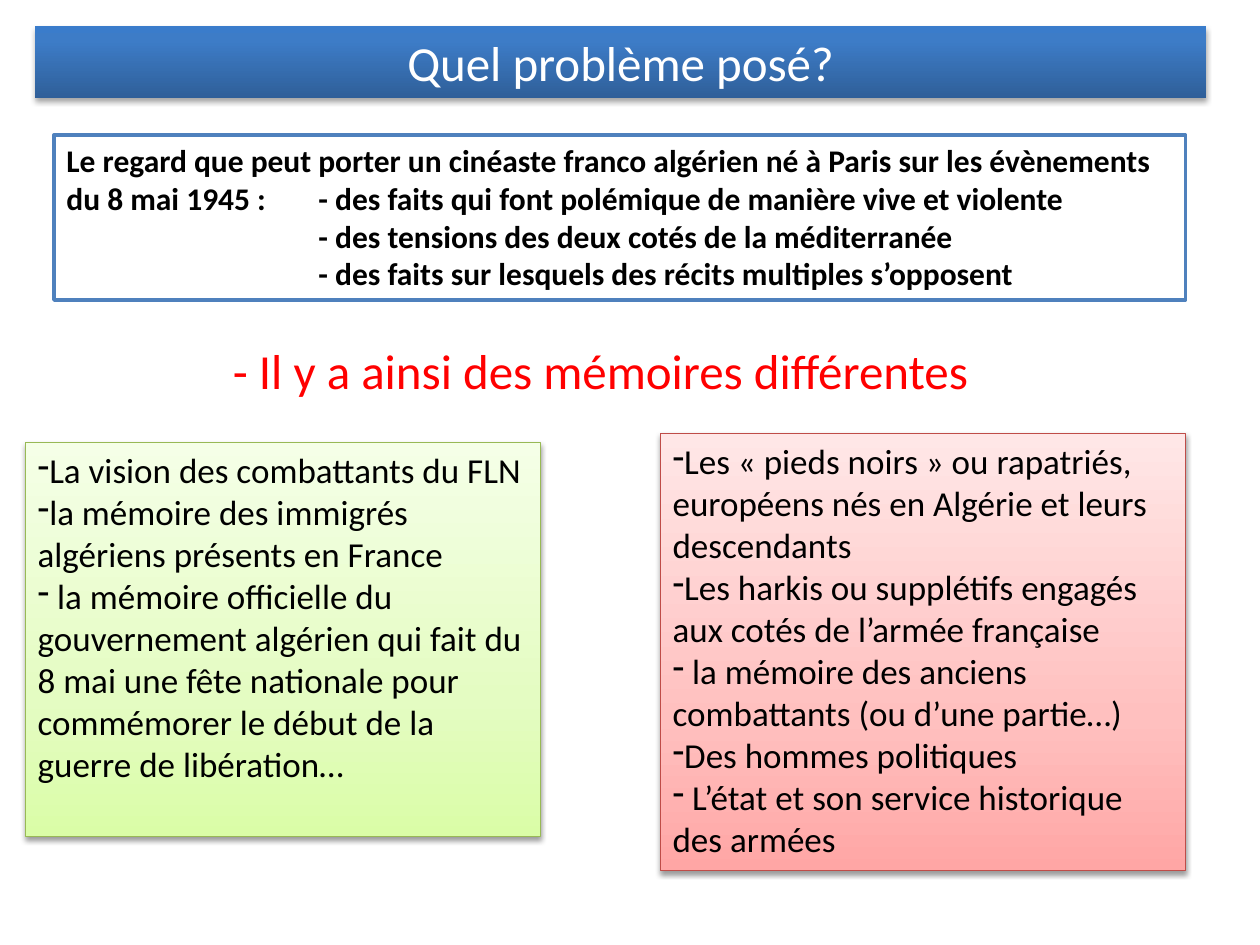
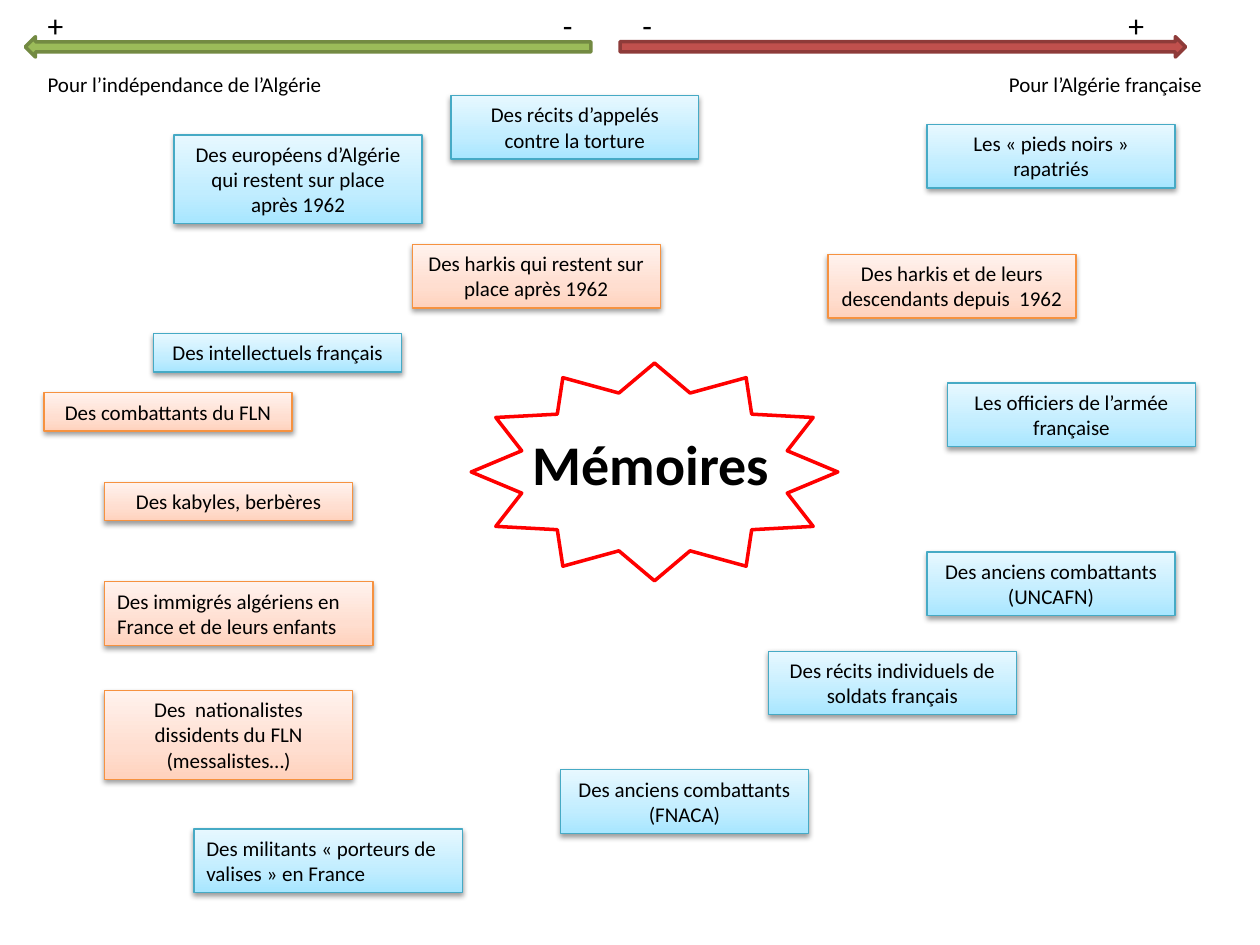
import lxml.etree
import pptx
import pptx.dml.color
import pptx.enum.shapes
import pptx.enum.text
import pptx.oxml
import pptx.oxml.ns
import pptx.util

Cm = pptx.util.Cm
Pt = pptx.util.Pt
qn = pptx.oxml.ns.qn
Shape = pptx.enum.shapes.MSO_SHAPE
Align = pptx.enum.text.PP_ALIGN
Anchor = pptx.enum.text.MSO_ANCHOR

# Each gradient runs from the bottom of the shape to its top.
BANNER = [(0, "2F5F99"), (80, "3D7CC7"), (100, "3A7CCB")]
GREEN = {"gradient": [(0, "DAFDA7"), (35, "E4FCC2"), (100, "F5FFE7")], "line": "98B955"}
RED = {"gradient": [(0, "FFA6A5"), (35, "FFC0BF"), (100, "FFE7E7")], "line": "BF4C48"}
BLUE = {"gradient": [(0, "A7E6FF"), (35, "C1EDFF"), (100, "E7F8FF")], "line": "46AAC5"}
ORANGE = {"gradient": [(0, "FFD2BD"), (35, "FFDED0"), (100, "FFF2ED")], "line": "F69240"}


def rgb(colour):
    return pptx.dml.color.RGBColor.from_string(colour)


def add_child(parent, tag, **attributes):
    return lxml.etree.SubElement(parent, qn(tag), {k: str(v) for k, v in attributes.items()})


def write(shape, text, size=12, colour="000000", bold=False, align=Align.LEFT,
          anchor=Anchor.TOP, dashes=False, font="Calibri"):
    """Write one paragraph per line of text, with dash bullets if asked."""
    frame = shape.text_frame
    frame.word_wrap = True
    frame.auto_size = pptx.enum.text.MSO_AUTO_SIZE.NONE
    frame.vertical_anchor = anchor
    for index, line in enumerate(text.split("\n")):
        paragraph = frame.add_paragraph() if index else frame.paragraphs[0]
        paragraph.alignment = align
        properties = paragraph._p.get_or_add_pPr()
        properties.set("defTabSz", str(pptx.util.Inches(1)))
        if dashes:
            properties.set("marL", "0")
            properties.set("indent", "0")
            add_child(properties, "a:buFontTx")
            add_child(properties, "a:buChar", char="-")
        run = paragraph.add_run()
        run.text = line
        run.font.name = font
        run.font.size = Pt(size)
        run.font.bold = bold
        run.font.color.rgb = rgb(colour)


class Deck:
    TITLE_ONLY, BLANK = 5, 6

    def __init__(self):
        self.presentation = pptx.Presentation()
        self.presentation.slide_width = Cm(25.4)
        self.presentation.slide_height = Cm(19.05)
        self.slide = None

    def new_slide(self, layout):
        self.slide = self.presentation.slides.add_slide(
            self.presentation.slide_layouts[layout])

    def paint(self, shape, fill=None, gradient=None, line=None, weight=0.75, shadow=None):
        """Set fill, outline and shadow; shadow is (opacity %, distance in points)."""
        if gradient:
            shape.fill.gradient()
            shape.fill.gradient_angle = 90
            stops = shape._element.spPr.find(".//" + qn("a:gsLst"))
            for stop in list(stops):
                stops.remove(stop)
            for position, colour in gradient:
                stop = add_child(stops, "a:gs", pos=position * 1000)
                add_child(stop, "a:srgbClr", val=colour)
        else:
            shape.fill.solid()
            shape.fill.fore_color.rgb = rgb(fill)
        if line:
            shape.line.color.rgb = rgb(line)
            shape.line.width = Pt(weight)
        else:
            shape.line.fill.background()
        shape.shadow.inherit = False
        if shadow:
            opacity, distance = shadow
            effects = shape._element.spPr.find(qn("a:effectLst"))
            outer = add_child(effects, "a:outerShdw", blurRad=Pt(3.1), dist=Pt(distance),
                              dir=5400000, rotWithShape=0)
            black = add_child(outer, "a:srgbClr", val="000000")
            add_child(black, "a:alpha", val=opacity * 1000)

    def title(self, text, left, top, width, height):
        banner = self.slide.shapes.title
        banner.left, banner.top = Cm(left), Cm(top)
        banner.width, banner.height = Cm(width), Cm(height)
        self.paint(banner, gradient=BANNER, shadow=(35, 1.8))
        write(banner, text, size=28, colour="FFFFFF", align=Align.CENTER,
              anchor=Anchor.MIDDLE)

    def shape(self, kind, left, top, width, height, **look):
        shape = self.slide.shapes.add_shape(kind, Cm(left), Cm(top), Cm(width), Cm(height))
        self.paint(shape, **look)
        return shape

    def label(self, text, left, top, width, height, **style):
        box = self.slide.shapes.add_textbox(Cm(left), Cm(top), Cm(width), Cm(height))
        write(box, text, **style)

    def panel(self, text, left, top, width, height, look, **style):
        """A shaded, shadowed rectangle with text."""
        panel = self.shape(Shape.RECTANGLE, left, top, width, height,
                           shadow=(38, 1.6), **look)
        write(panel, text, **style)

    def card(self, text, left, top, lines, look, width=5, align=Align.CENTER):
        """A small panel whose height follows its number of text lines."""
        self.panel(text, left, top, width, 0.26 + 0.51 * lines, look, align=align)


def problem_slide(deck):
    deck.new_slide(Deck.TITLE_ONLY)
    deck.title("Quel problème posé?", 0.71, 0.53, 23.6, 1.45)

    viewpoint = deck.shape(Shape.RECTANGLE, 1.09, 2.72, 22.81, 3.33,
                           fill="FFFFFF", line="4F81BD", weight=2)
    write(viewpoint,
          "Le regard que peut porter un cinéaste franco algérien né à Paris sur les "
          "évènements du 8 mai 1945 : \t- des faits qui font polémique de manière vive et violente\n"
          "\t\t- des tensions des deux cotés de la méditerranée\n"
          "\t\t- des faits sur lesquels des récits multiples s’opposent",
          size=18, bold=True)
    deck.label("- Il y a ainsi des mémoires différentes ", 3.91, 6.73, 16.61, 1.45,
               size=28, colour="FF0000", align=Align.CENTER)

    deck.panel("La vision des combattants du FLN\n"
               "la mémoire des immigrés algériens présents en France\n"
               " la mémoire officielle du gouvernement algérien qui fait du 8 mai une fête "
               "nationale pour commémorer le début de la guerre de libération…",
               0.51, 8.92, 10.39, 7.95, GREEN, size=20, dashes=True)
    deck.panel("Les « pieds noirs » ou rapatriés, européens nés en Algérie et leurs descendants\n"
               "Les harkis ou supplétifs engagés aux cotés de l’armée française\n"
               " la mémoire des anciens combattants (ou d’une partie…)\n"
               "Des hommes politiques\n"
               " L’état et son service historique des armées",
               13.31, 8.74, 10.59, 8.81, RED, size=20, dashes=True)


def memories_slide(deck):
    deck.new_slide(Deck.BLANK)
    deck.shape(Shape.RIGHT_ARROW, 12.5, 0.74, 11.4, 0.41,
               fill="C0504D", line="8E3B39", weight=2)
    independence = deck.shape(Shape.RIGHT_ARROW, 0.51, 0.74, 11.4, 0.41,
                              fill="9BBB59", line="738A42", weight=2)
    independence.rotation = 180
    deck.label("Pour l’indépendance de l’Algérie", 0.71, 1.32, 6.81, 0.77)
    deck.label("Pour l’Algérie française", 20.09, 1.32, 4.6, 0.77)
    for sign, left in (("+", 0.71), ("-", 12.7), ("-", 11.1), ("+", 22.5)):
        deck.label(sign, left, 0, 1, 1.02, size=18)

    deck.shape(Shape.STAR_12_POINT, 9.5, 7.32, 7.39, 4.39,
               fill="FFFFFF", line="FF0000", weight=2)
    deck.label("Mémoires", 10.49, 8.53, 5.59, 1.63, size=32, bold=True)

    for text, left, top, lines, look in (
        ("Des européens d’Algérie qui restent sur place après 1962", 3.51, 2.72, 3, BLUE),
        ("Des harkis qui restent sur place après 1962", 8.31, 4.93, 2, ORANGE),
        ("Des récits individuels de soldats français", 15.49, 13.13, 2, BLUE),
        ("Des anciens combattants (UNCAFN)", 18.69, 11.13, 2, BLUE),
        ("Les « pieds noirs » rapatriés", 18.69, 2.51, 2, BLUE),
        ("Des harkis et de leurs descendants depuis  1962", 16.69, 5.13, 2, ORANGE),
        ("Les officiers de l’armée française", 19.1, 7.72, 2, BLUE),
        ("Des anciens combattants (FNACA)", 11.3, 15.52, 2, BLUE),
        ("Des  nationalistes dissidents du FLN (messalistes…)", 2.11, 13.92, 3, ORANGE),
        ("Des kabyles, berbères", 2.11, 9.73, 1, ORANGE),
        ("Des combattants du FLN", 0.89, 7.92, 1, ORANGE),
        ("Des intellectuels français", 3.1, 6.73, 1, BLUE),
        ("Des récits d’appelés contre la torture", 9.09, 1.93, 2, BLUE),
    ):
        deck.card(text, left, top, lines, look)
    for text, left, top, look in (
        ("Des immigrés algériens en France et de leurs enfants", 2.11, 11.73, ORANGE),
        ("Des militants « porteurs de valises » en France", 3.91, 16.71, BLUE),
    ):
        deck.card(text, left, top, 2, look, width=5.41, align=Align.LEFT)


def main():
    deck = Deck()
    problem_slide(deck)
    memories_slide(deck)
    deck.presentation.save("out.pptx")


if __name__ == "__main__":
    main()
